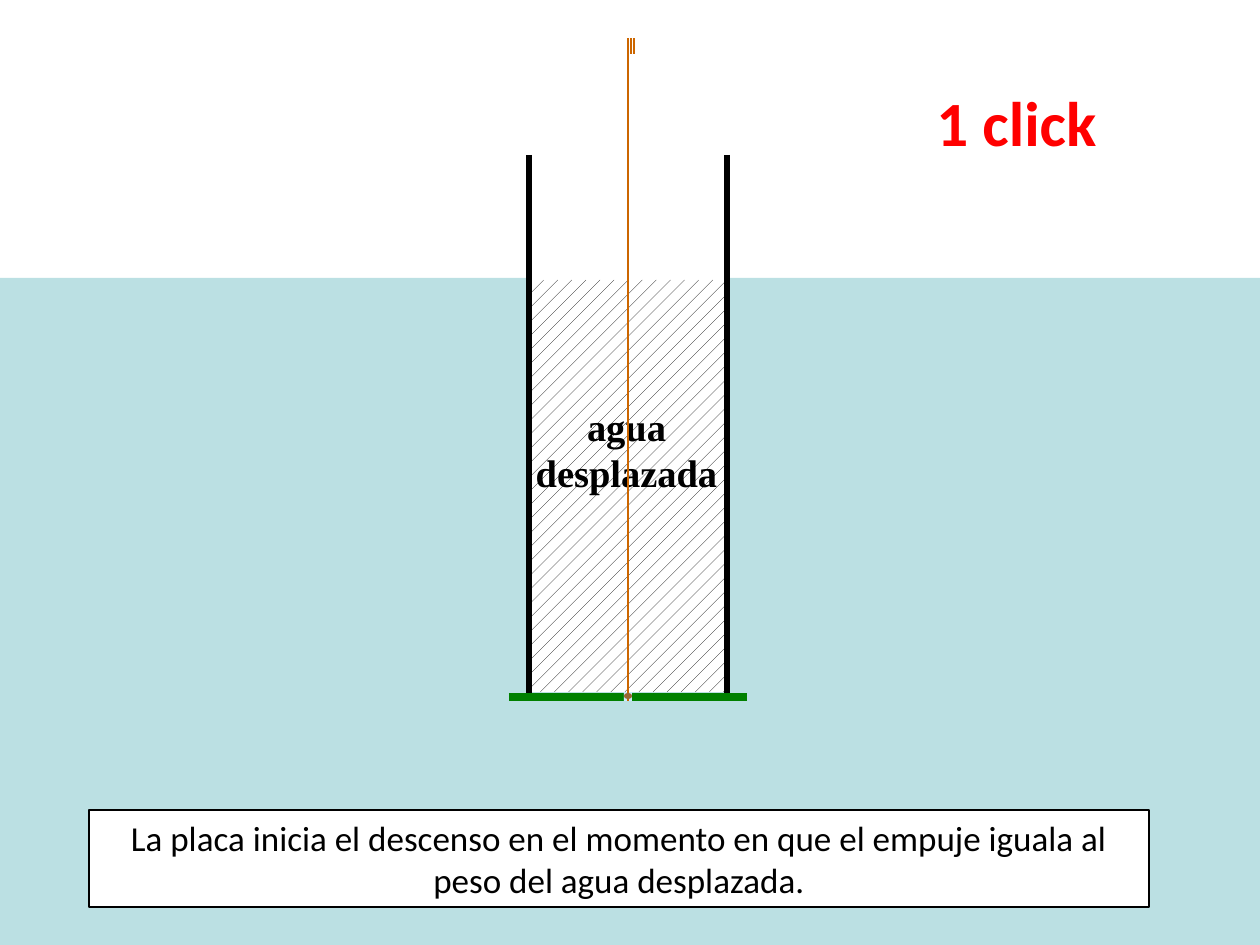
from dataclasses import dataclass
from typing import Optional

from lxml import etree
from pptx import Presentation
from pptx import util as u
from pptx.dml.color import RGBColor
from pptx.enum import dml, shapes, text
from pptx.oxml import ns

EMU_PER_PX = 914400 / 126


@dataclass(frozen=True)
class Theme:
    water: str = "BBE0E3"
    white: str = "FFFFFF"
    black: str = "000000"
    plate: str = "008000"
    notch: str = "CCECFF"
    string: str = "CC6600"
    knot: str = "996633"
    click: str = "FF0000"
    sans: str = "Calibri"
    serif: str = "Times New Roman"
    caption_size: int = 20
    label_size: int = 22
    click_size: int = 36


THEME = Theme()


@dataclass(frozen=True)
class Box:
    left: int
    top: int
    width: int
    height: int


@dataclass(frozen=True)
class Line:
    x1: int
    y1: int
    x2: int
    y2: int
    color: str
    points: float


@dataclass(frozen=True)
class TextStyle:
    font: str
    size: int
    color: str
    bold: bool = False
    align: Optional[text.PP_ALIGN] = text.PP_ALIGN.CENTER


def px(value: int) -> int:
    return round(value * EMU_PER_PX)


def rgb(color: str) -> RGBColor:
    return RGBColor.from_string(color)


def edges(box: Box) -> list[int]:
    return [px(value) for value in (box.left, box.top, box.width, box.height)]


def add_box(container, box: Box, color: str, kind=shapes.MSO_SHAPE.RECTANGLE):
    shape = container.add_shape(kind, *edges(box))
    shape.shadow.inherit = False
    shape.fill.solid()
    shape.fill.fore_color.rgb = rgb(color)
    shape.line.fill.background()
    return shape


def add_line(container, line: Line):
    connector = container.add_connector(
        shapes.MSO_CONNECTOR.STRAIGHT, px(line.x1), px(line.y1), px(line.x2), px(line.y2)
    )
    connector.line.color.rgb = rgb(line.color)
    connector.line.width = u.Pt(line.points)
    properties = connector._element.spPr
    etree.SubElement(properties, ns.qn("a:effectLst"))
    return connector


def write(shape, words: str, style: TextStyle):
    """Put one styled paragraph in the shape and return it."""
    frame = shape.text_frame
    frame.text = words
    frame.word_wrap = True
    frame.auto_size = text.MSO_AUTO_SIZE.SHAPE_TO_FIT_TEXT
    frame.vertical_anchor = text.MSO_ANCHOR.TOP
    paragraph = frame.paragraphs[0]
    paragraph.alignment = style.align
    font = paragraph.runs[0].font
    font.name, font.size, font.bold = style.font, u.Pt(style.size), style.bold
    font.color.rgb = rgb(style.color)
    return paragraph


def add_water(container) -> None:
    add_box(container, Box(0, 278, 1260, 667), THEME.water)
    add_box(container, Box(529, 229, 198, 466), THEME.white)
    add_box(container, Box(529, 478, 198, 441), THEME.water)
    displaced = add_box(container, Box(530, 280, 195, 412), THEME.white)
    displaced.fill.patterned()
    displaced.fill.pattern = dml.MSO_PATTERN.PERCENT_10
    displaced.fill.fore_color.rgb = rgb(THEME.black)
    displaced.fill.back_color.rgb = rgb(THEME.white)


def add_tube(container) -> None:
    tube = container.add_group_shape().shapes
    for x in (529, 727):
        add_line(tube, Line(x, 155, x, 697, THEME.black, 3))


def add_plate_and_string(container) -> None:
    plate = container.add_group_shape().shapes
    add_line(plate, Line(509, 697, 747, 697, THEME.plate, 4.5))
    notch = add_box(plate, Box(624, 692, 8, 9), THEME.notch)

    string = container.add_group_shape().shapes
    main = add_line(string, Line(628, 701, 628, 38, THEME.string, 1.5))
    main.begin_connect(notch, 2)
    for x in (631, 634):
        add_line(string, Line(x, 54, x, 38, THEME.string, 1.5))
    add_box(container, Box(624, 693, 8, 6), THEME.knot, shapes.MSO_SHAPE.OVAL)


def main() -> None:
    presentation = Presentation()
    presentation.slide_width = u.Inches(10)
    presentation.slide_height = u.Inches(7.5)
    slide = presentation.slides.add_slide(presentation.slide_layouts[6])
    container = slide.shapes

    add_water(container)
    add_tube(container)
    label = container.add_textbox(*edges(Box(517, 397, 219, 105)))
    paragraph = write(
        label, "agua desplazada", TextStyle(THEME.serif, THEME.label_size, THEME.black, True)
    )
    paragraph.space_before = u.Pt(2)
    add_plate_and_string(container)

    caption = add_box(container, Box(89, 810, 1060, 97), THEME.white)
    caption.line.color.rgb = rgb(THEME.black)
    caption.line.width = u.Pt(0.75)
    write(
        caption,
        "La placa inicia el descenso en el momento en que el empuje iguala al "
        "peso del agua desplazada.",
        TextStyle(THEME.sans, THEME.caption_size, THEME.black),
    )
    click = container.add_textbox(*edges(Box(924, 77, 203, 89)))
    write(
        click,
        "1 click",
        TextStyle(THEME.sans, THEME.click_size, THEME.click, True, text.PP_ALIGN.LEFT),
    )
    presentation.save("out.pptx")


if __name__ == "__main__":
    main()
